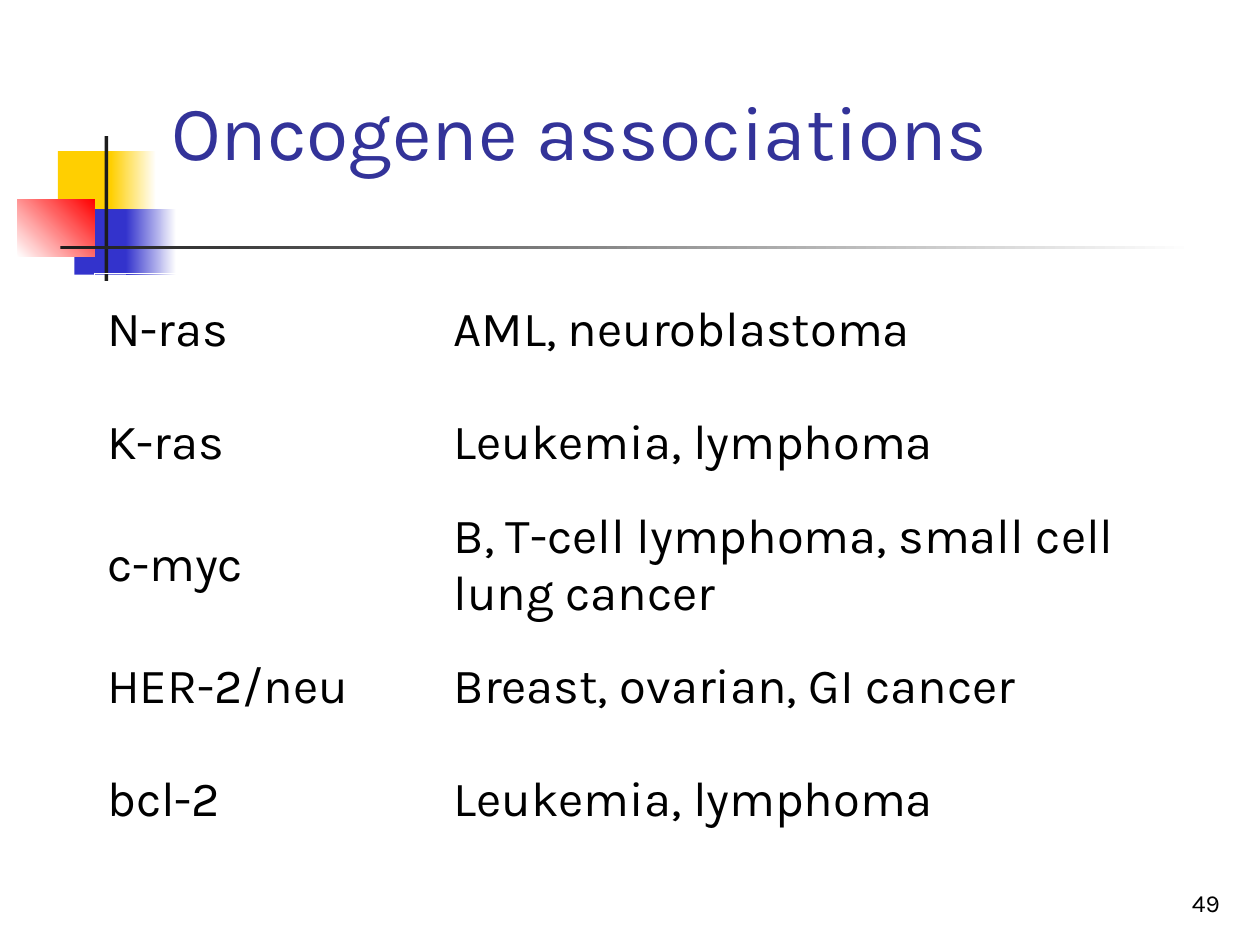
import pptx
import pptx.dml.color
import pptx.enum.shapes
import pptx.enum.text
import pptx.util

Inches = pptx.util.Inches
Pt = pptx.util.Pt
ALIGN = pptx.enum.text.PP_ALIGN
ANCHOR = pptx.enum.text.MSO_ANCHOR

COLORS = {
    "yellow": "FFCF01",
    "blue": "3333CC",
    "red": "FF0000",
    "white": "FFFFFF",
    "line": "1C1C1C",
    "title": "333399",
    "text": "000000",
}


def rgb(name):
    """Look up a palette colour by name."""
    return pptx.dml.color.RGBColor.from_string(COLORS[name])


def write_text(text_frame, text, size, color, paragraph_format):
    paragraph = text_frame.paragraphs[0]
    for attribute, value in paragraph_format.items():
        setattr(paragraph, attribute, value)
    run = paragraph.add_run()
    run.text = text
    for attribute, value in {"name": "Karla", "size": Pt(size)}.items():
        setattr(run.font, attribute, value)
    run.font.color.rgb = rgb(color)


presentation = pptx.Presentation()
presentation.slide_width = Inches(10)
presentation.slide_height = Inches(7.5)
slide = presentation.slides.add_slide(presentation.slide_layouts[6])

# Decoration: left, top, width, height, start colour, end colour, angle
blocks = [
    (0.46, 1.2, 0.48, 0.52, "yellow", None, 0),
    (0.88, 1.2, 0.36, 0.52, "yellow", "white", 0),
    (0.59, 1.66, 0.46, 0.52, "blue", None, 0),
    (1, 1.66, 0.4, 0.52, "blue", "white", 0),
    (0.14, 1.58, 0.61, 0.46, "white", "red", 45),
    (0.83, 1.08, 0.03, 1.15, "line", None, 0),
    (0.48, 1.95, 9, 0.03, "line", "white", 0),
]
for *box, start, end, angle in blocks:
    shape = slide.shapes.add_shape(
        pptx.enum.shapes.MSO_SHAPE.RECTANGLE, *map(Inches, box)
    )
    shape.shadow.inherit = False
    shape.line.fill.background()
    if end is None:
        shape.fill.solid()
        shape.fill.fore_color.rgb = rgb(start)
    else:
        shape.fill.gradient()
        shape.fill.gradient_angle = angle
        for stop, color, position in zip(shape.fill.gradient_stops, (start, end), (0, 1)):
            stop.color.rgb = rgb(color)
            stop.position = position

# Slide number and title: box, text, size, colour, anchor, alignment
text_boxes = [
    ((7.7, 6.83, 2.08, 0.5), "49", 14, "text", ANCHOR.BOTTOM, ALIGN.RIGHT),
    ((1.26, 0.23, 8.52, 1.6), "Oncogene associations", 44, "title", ANCHOR.MIDDLE, ALIGN.LEFT),
]
for box, text, size, color, anchor, alignment in text_boxes:
    text_frame = slide.shapes.add_textbox(*map(Inches, box)).text_frame
    for attribute, value in {"word_wrap": True, "vertical_anchor": anchor}.items():
        setattr(text_frame, attribute, value)
    write_text(text_frame, text, size, color, {"alignment": alignment})

associations = [
    ("N-ras", "AML, neuroblastoma"),
    ("K-ras", "Leukemia, lymphoma"),
    ("c-myc", "B, T-cell lymphoma, small cell lung cancer"),
    ("HER-2/neu", "Breast, ovarian, GI cancer"),
    ("bcl-2", "Leukemia, lymphoma"),
]
row_height = 0.9
table = slide.shapes.add_table(
    len(associations), 2,
    Inches(0.75), Inches(2.17), Inches(8.5), Inches(row_height * len(associations)),
).table
for attribute in ("first_row", "horz_banding"):
    setattr(table, attribute, False)
for column, width in zip(table.columns, (2.75, 5.75)):
    column.width = Inches(width)
for row, texts in zip(table.rows, associations):
    row.height = Inches(row_height)
    for cell, text in zip(row.cells, texts):
        cell.fill.background()
        cell.vertical_anchor = ANCHOR.MIDDLE
        write_text(cell.text_frame, text, 28, "text", {"space_before": Pt(5.6)})

presentation.save("out.pptx")
